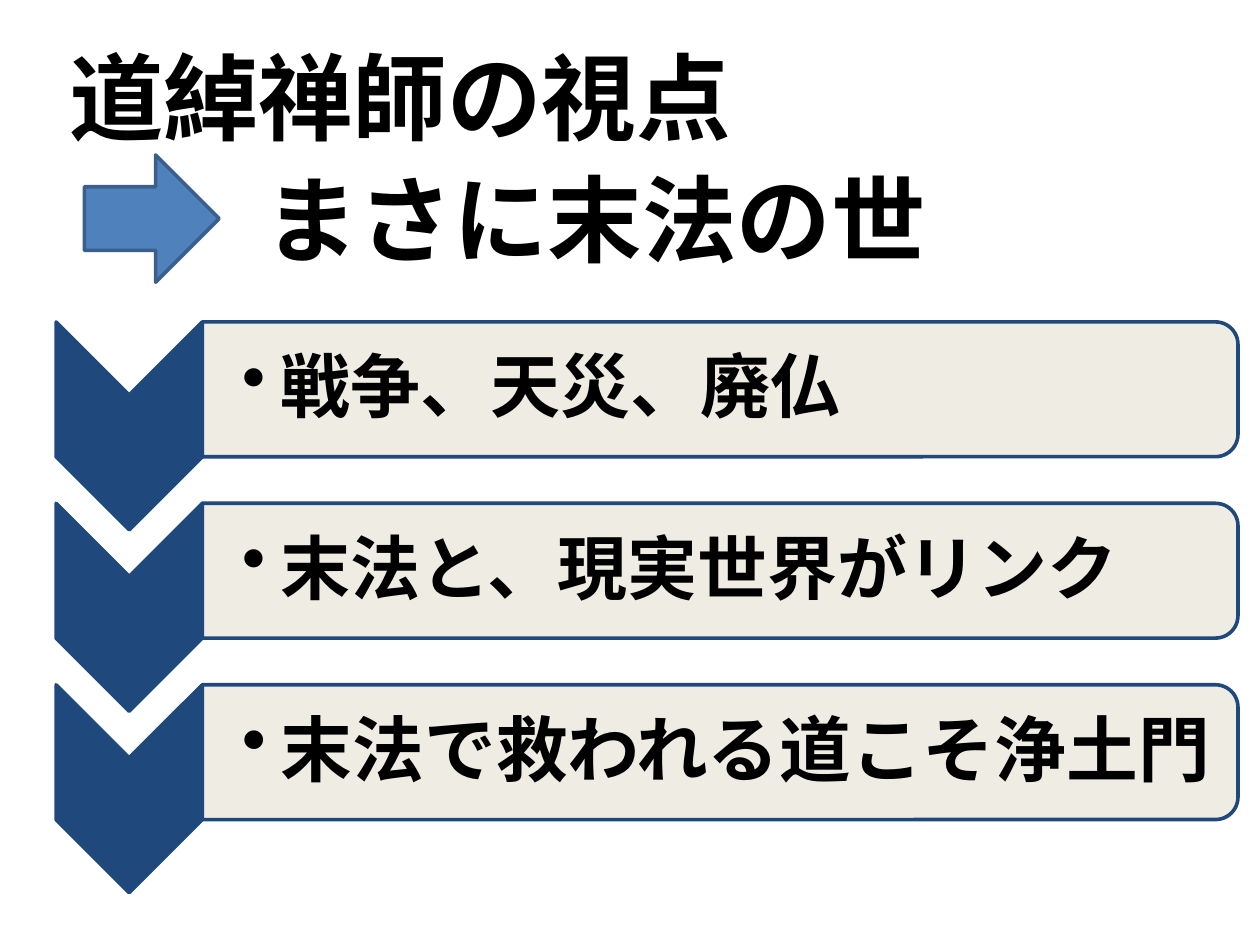
from lxml.etree import SubElement as Sub
from pptx import Presentation
from pptx.dml.color import RGBColor
from pptx.enum.shapes import MSO_SHAPE as Kind
from pptx.enum.text import MSO_ANCHOR as Anchor
from pptx.oxml.ns import qn
from pptx.util import Inches, Pt

FACE = "Noto Sans CJK JP"
NAVY, CREAM, BLUE, EDGE, BLACK = "1F497D", "EEECE1", "4F81BD", "3A5F8C", "000000"
TITLES = [("道綽禅師の視点", 0.45, 0.26, 5.95), ("まさに末法の世", 2, 1.23, 5.76)]
ROWS = [("戦争、天災、廃仏", 40), ("末法と、現実世界がリンク", 40), ("末法で救われる道こそ浄土門", 41)]
TOP, STEP = 2.56, 1.44


def paint(color, code):
    """Set a colour from a hex string."""
    color.rgb = RGBColor.from_string(code)


def add_shape(slide, kind, box, fill, line, turn=0):
    """Add a filled, outlined preset shape."""
    shape = slide.shapes.add_shape(kind, *map(Inches, box))
    shape.shadow.inherit = False
    shape.rotation = turn
    shape.fill.solid()
    paint(shape.fill.fore_color, fill)
    paint(shape.line.color, line)
    shape.line.width = Pt(2.08)
    return shape


def fade(shape, share):
    """Make the fill of a shape partly opaque, in percent."""
    color = shape._element.spPr.find(qn("a:solidFill"))[0]
    Sub(color, qn("a:alpha"), val=str(share * 1000))


def add_text(slide, text, box, size):
    """Add a text box with one bold line and return its frame."""
    frame = slide.shapes.add_textbox(*map(Inches, box)).text_frame
    frame.word_wrap = True
    line = frame.paragraphs[0]
    line.text = text
    font = line.font
    font.size, font.bold, font.name = Pt(size), True, FACE
    paint(font.color, BLACK)
    Sub(line._p.pPr.find(qn("a:defRPr")), qn("a:ea"), typeface=FACE)
    return frame


def add_bullet(line, indent):
    """Give a paragraph a round bullet and a hanging indent."""
    props = line._p.get_or_add_pPr()
    props.set("marL", str(indent))
    props.set("indent", str(-indent))
    mark = Sub(props, qn("a:buChar"), char="•")
    props.find(qn("a:defRPr")).addprevious(mark)


def add_row(slide, top, text, size):
    """Add a chevron with its bar and bulleted line."""
    add_shape(slide, Kind.CHEVRON, (0.2, top + 0.24, 1.65, 1.16), NAVY, NAVY, 90)
    bar = (5.18, top - 3.58, 1.07, 8.22)
    fade(add_shape(slide, Kind.ROUND_2_SAME_RECTANGLE, bar, CREAM, NAVY, 90), 90)
    frame = add_text(slide, text, (1.61, top + 0.05, 8.17, 0.97), size)
    frame.vertical_anchor = Anchor.MIDDLE
    frame.margin_left = Inches(0.31)
    frame.margin_top = frame.margin_right = frame.margin_bottom = Inches(0.03)
    line = frame.paragraphs[0]
    add_bullet(line, Inches(0.31))
    line.line_spacing = 0.9
    line.space_after = Pt(6)


def main():
    """Build the slide and save it."""
    deck = Presentation()
    deck.slide_width, deck.slide_height = Inches(10), Inches(7.5)
    slide = deck.slides.add_slide(deck.slide_layouts[6])
    for text, left, top, width in TITLES:
        add_text(slide, text, (left, top, width, 1.01), 54)
    add_shape(slide, Kind.RIGHT_ARROW, (0.67, 1.23, 1.07, 1.01), BLUE, EDGE)
    for i, (text, size) in enumerate(ROWS):
        add_row(slide, TOP + i * STEP, text, size)
    deck.save("out.pptx")


if __name__ == "__main__":
    main()
